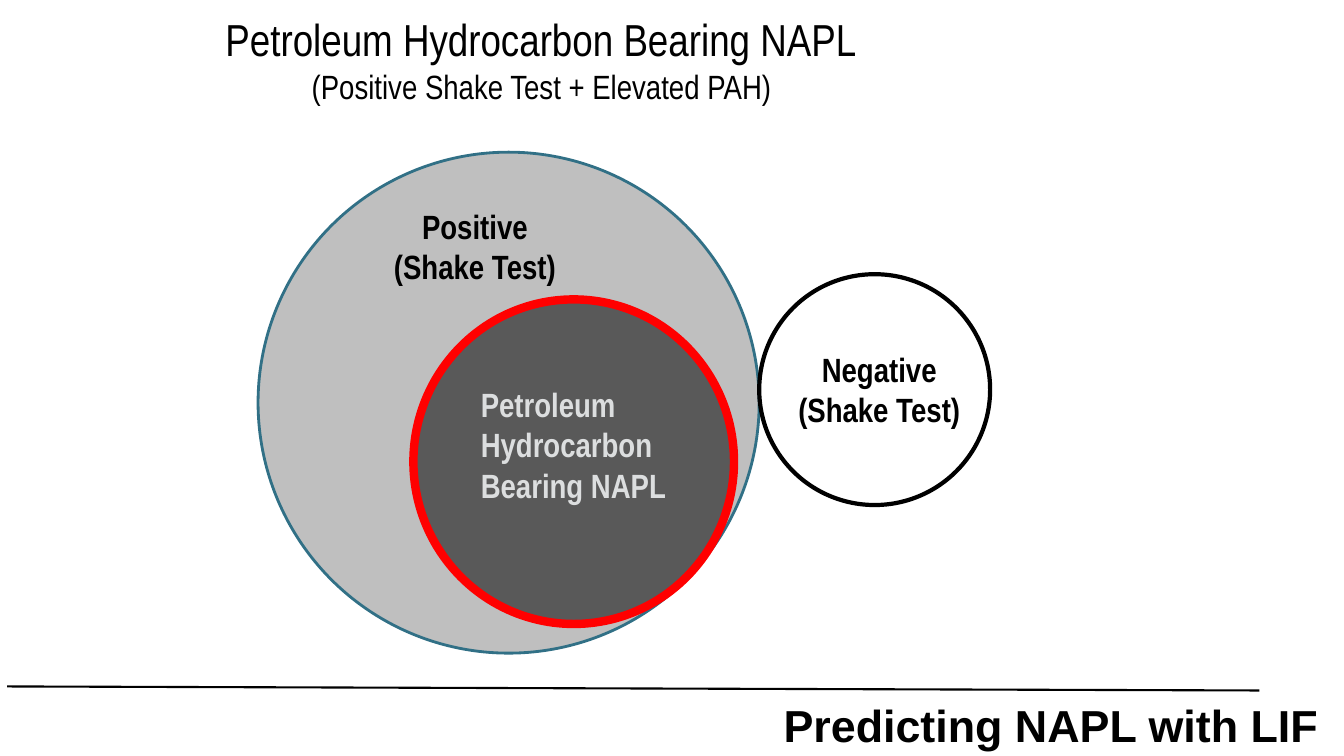
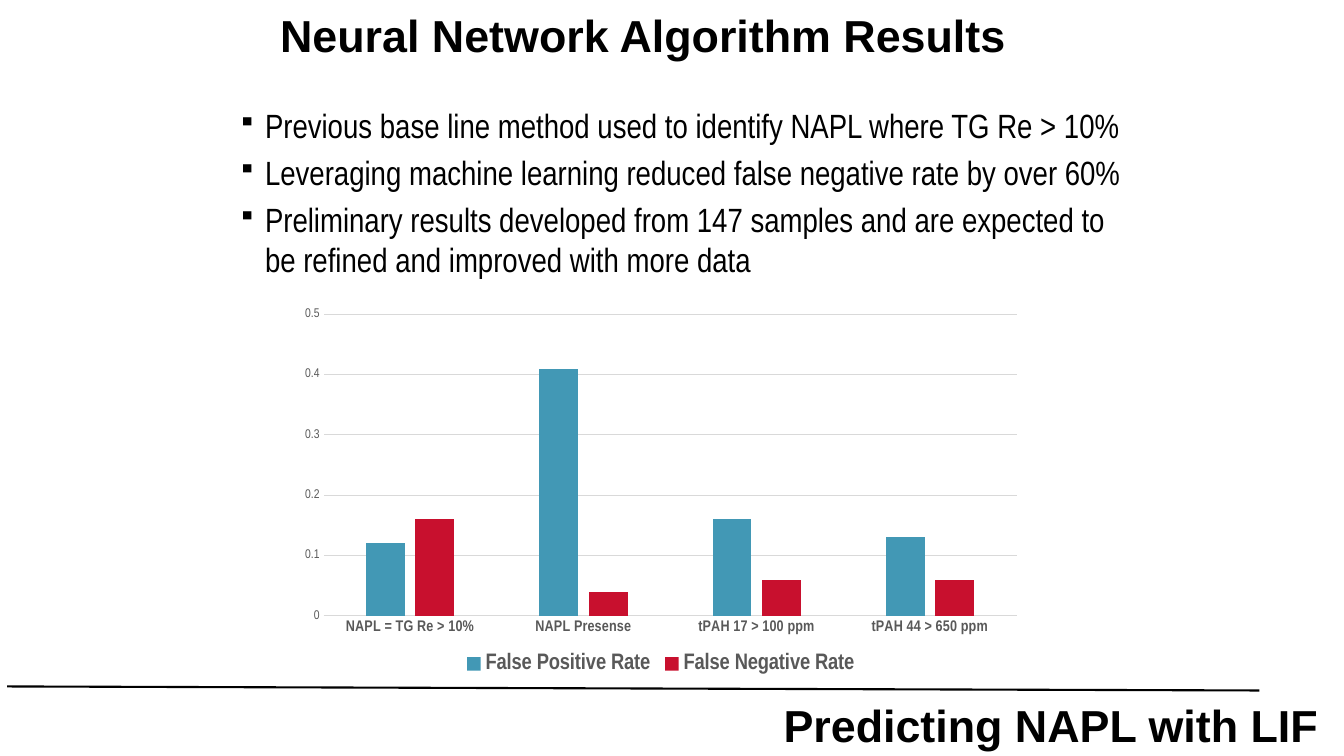
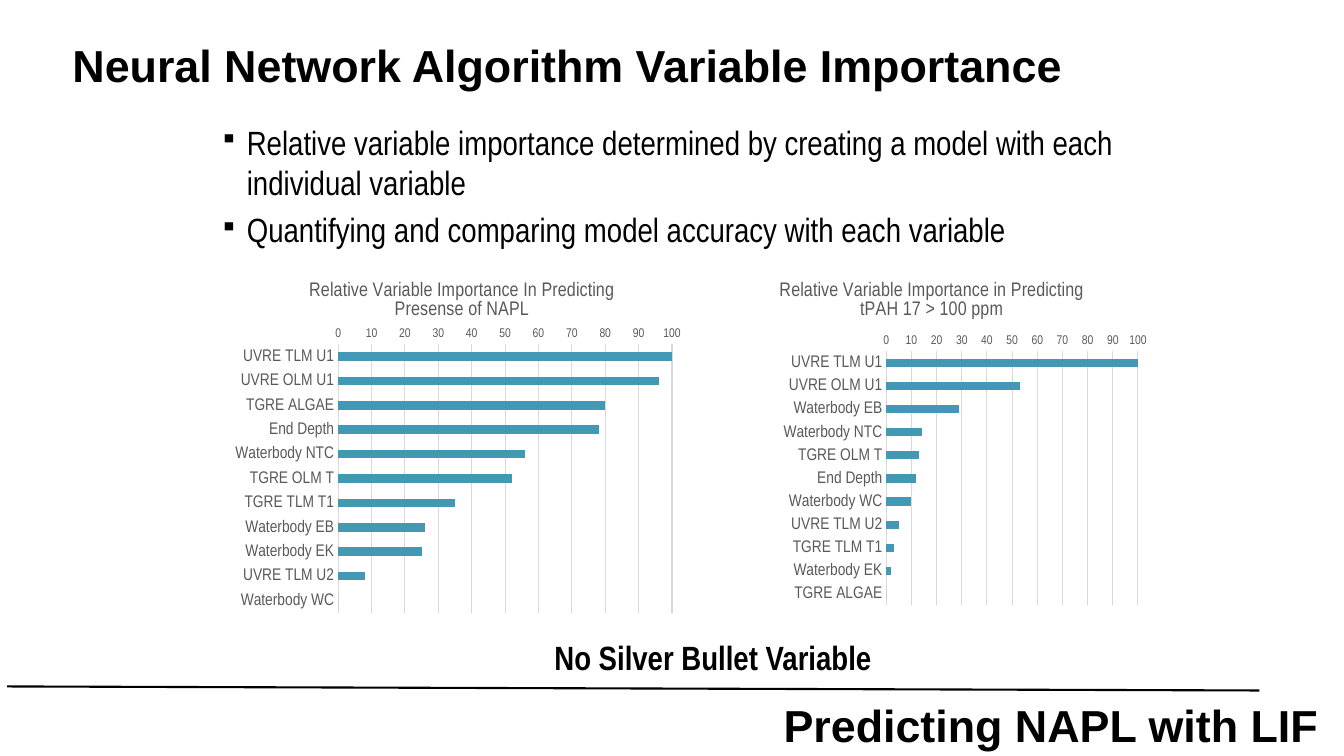
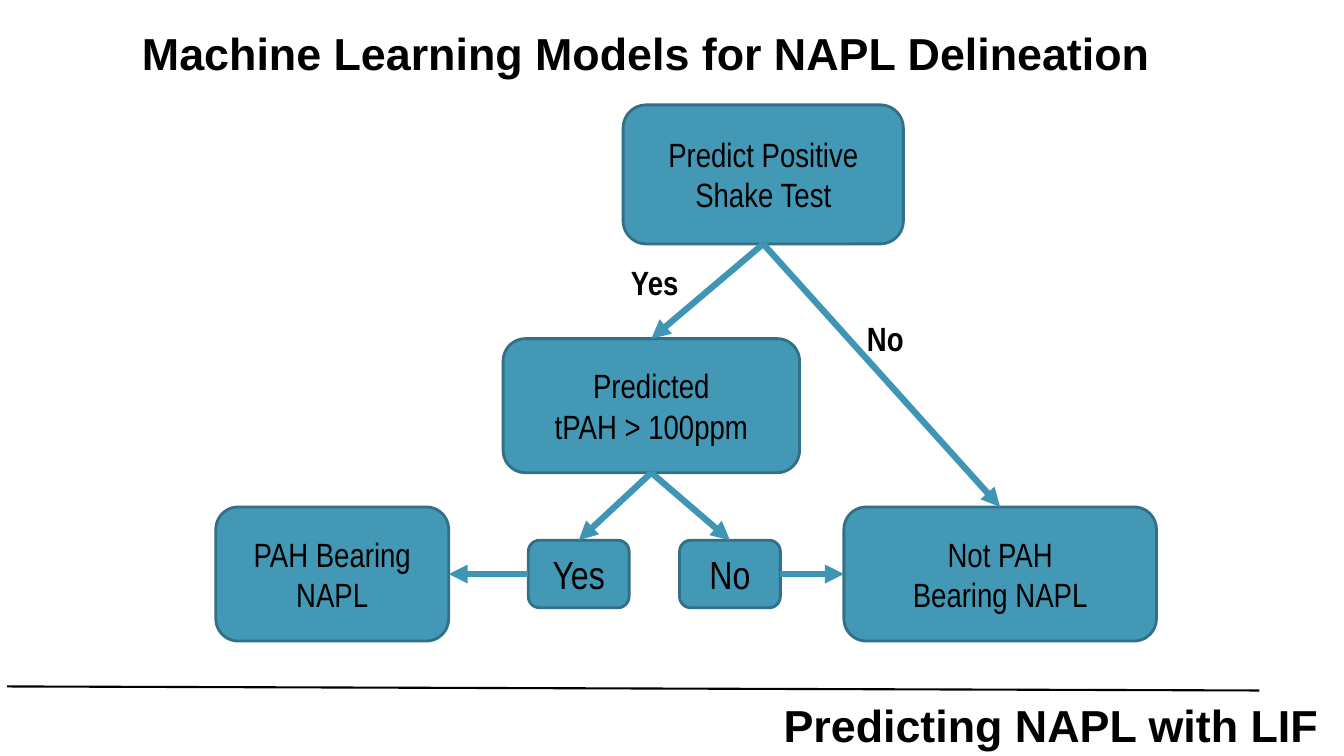
from lxml import etree
from pptx import Presentation
from pptx.chart.data import CategoryChartData
from pptx.dml.color import RGBColor
from pptx.enum.chart import XL_CHART_TYPE as CHART, XL_LEGEND_POSITION as LEGEND, XL_TICK_MARK as TICK
from pptx.enum.shapes import MSO_CONNECTOR as CONN, MSO_SHAPE as SHAPE
from pptx.enum.text import MSO_ANCHOR as ANCHOR, PP_ALIGN as ALIGN
from pptx.oxml import parse_xml
from pptx.oxml.ns import nsdecls, qn
from pptx.util import Inches, Pt

BLACK = RGBColor(0x00, 0x00, 0x00)
BLUE = RGBColor(0x42, 0x98, 0xB5)
EDGE = RGBColor(0x31, 0x70, 0x86)
ARROW = RGBColor(0x3E, 0x96, 0xB4)
CRIMSON = RGBColor(0xC8, 0x10, 0x2E)
RED = RGBColor(0xFF, 0x00, 0x00)
LIGHT = RGBColor(0xBF, 0xBF, 0xBF)
DARK = RGBColor(0x59, 0x59, 0x59)
PALE = RGBColor(0xDC, 0xDE, 0xDF)
GRID = RGBColor(0xD9, 0xD9, 0xD9)

NARROW = "Arial Narrow"
BODY = {"name": NARROW, "size": Pt(24), "bold": False}
STRONG = {**BODY, "bold": True}
HEADING = {"name": "Arial", "size": Pt(32), "bold": True}
HEADING_LINE = Pt(34.7)
TOP, LEFT, BOTTOM, RIGHT = range(4)


def set_font(font, fmt, color=BLACK):
    for key, value in fmt.items():
        setattr(font, key, value)
    font.color.rgb = color


def set_line(line, color, width):
    line.color.rgb = color
    line.width = Pt(width)


def write(tf, lines, fmt, color=BLACK, align=None, spacing=None):
    for i, text in enumerate(lines):
        p = tf.add_paragraph() if i else tf.paragraphs[0]
        for key, value in {"alignment": align, "line_spacing": spacing}.items():
            setattr(p, key, value)
        r = p.add_run()
        r.text = text
        set_font(r.font, fmt, color)


def add_text(s, box, lines, fmt, wrap=True, **options):
    tf = s.shapes.add_textbox(*map(Inches, box)).text_frame
    tf.word_wrap = wrap
    write(tf, lines, fmt, **options)
    return tf


def add_title(s, box, text):
    add_text(s, box, [text], HEADING, spacing=HEADING_LINE)


def add_bullets(s, box, lines):
    tf = add_text(s, box, lines, BODY)
    for i, p in enumerate(tf.paragraphs):
        if i:
            p.space_before = Pt(4.8)
        pPr = p._p.get_or_add_pPr()
        pPr.set("marL", str(Inches(0.27)))
        pPr.set("indent", str(-Inches(0.27)))
        etree.SubElement(pPr, qn("a:buSzPct")).set("val", "75000")
        etree.SubElement(pPr, qn("a:buChar")).set("char", "▪")


def add_shape(s, kind, box, fill, edge, width):
    sp = s.shapes.add_shape(kind, *map(Inches, box))
    sp.shadow.inherit = False
    if fill is None:
        sp.fill.background()
    else:
        sp.fill.solid()
        sp.fill.fore_color.rgb = fill
    set_line(sp.line, edge, width)
    return sp


def add_node(s, box, lines, size=24):
    sp = add_shape(s, SHAPE.FLOWCHART_ALTERNATE_PROCESS, box, BLUE, EDGE, 2)
    write(sp.text_frame, lines, {**BODY, "size": Pt(size)}, align=ALIGN.CENTER)
    return sp


def add_line(s, ends, color, width):
    line = s.shapes.add_connector(CONN.STRAIGHT, *map(Inches, ends))
    set_line(line.line, color, width)
    etree.SubElement(line._element.spPr, qn("a:effectLst"))
    return line


def add_arrow(s, start, start_site, end, end_site):
    line = add_line(s, (0, 0, 1, 1), ARROW, 4.5)
    line.begin_connect(start, start_site)
    line.end_connect(end, end_site)
    ln = line._element.spPr.find(qn("a:ln"))
    etree.SubElement(ln, qn("a:tailEnd")).set("type", "triangle")


def add_slide(prs):
    s = prs.slides.add_slide(prs.slide_layouts[6])
    add_line(s, (0.07, 6.81, 12.49, 6.85), BLACK, 1.5)
    tf = add_text(s, (7.52, 6.89, 5.81, 0.61), ["Predicting NAPL with LIF"], HEADING,
                  align=ALIGN.CENTER, spacing=HEADING_LINE)
    tf.vertical_anchor = ANCHOR.BOTTOM
    tf.margin_left = tf.margin_right = Inches(0.25)
    return s


def layout_xml(x, y, size=None):
    target = '<c:layoutTarget val="inner"/>' if size else ""
    extent = '<c:w val="{}"/><c:h val="{}"/>'.format(*size) if size else ""
    return parse_xml(
        f'<c:layout {nsdecls("c")}><c:manualLayout>{target}'
        f'<c:xMode val="edge"/><c:yMode val="edge"/><c:x val="{x}"/><c:y val="{y}"/>'
        f'{extent}</c:manualLayout></c:layout>')


def add_chart(s, kind, box, cats, series, gap, top, cat_font):
    data = CategoryChartData()
    data.categories = cats
    for name, values, _ in series:
        data.add_series(name, values)
    chart = s.shapes.add_chart(kind, *map(Inches, box), data).chart
    set_font(chart.font, {"name": NARROW, "size": Pt(10)})
    chart.has_legend = chart.has_title = False
    plot = chart.plots[0]
    plot.gap_width = gap
    plot.vary_by_categories = False
    for ser, (_, _, color) in zip(plot.series, series):
        ser.format.fill.solid()
        ser.format.fill.fore_color.rgb = color
    cat, val = chart.category_axis, chart.value_axis
    for axis, fmt in ((cat, cat_font), (val, {"size": Pt(9), "bold": False})):
        axis.major_tick_mark = axis.minor_tick_mark = TICK.NONE
        set_font(axis.tick_labels.font, {"name": NARROW, **fmt}, DARK)
    set_line(cat.format.line, GRID, 0.75)
    val.format.line.fill.background()
    val.minimum_scale, val.maximum_scale, val.major_unit = 0, top, top / (5 if top < 1 else 10)
    val.has_major_gridlines = True
    set_line(val.major_gridlines.format.line, GRID, 0.75)
    return chart


def add_importance(s, box, title, title_at, plot_at, plot_size, ranking):
    chart = add_chart(s, CHART.BAR_CLUSTERED, box, list(ranking),
                      [("Series 1", list(ranking.values()), BLUE)],
                      182, 100, {"size": Pt(12), "bold": False})
    chart.category_axis.reverse_order = True
    write(chart.chart_title.text_frame, [title], {**BODY, "size": Pt(14)}, DARK)
    element = chart.chart_title._element
    for old in element.findall(qn("c:layout")):
        element.remove(old)
    element.find(qn("c:tx")).addnext(layout_xml(*title_at))
    area = chart._chartSpace.chart.plotArea
    for old in area.findall(qn("c:layout")):
        area.remove(old)
    area.insert(0, layout_xml(*plot_at, plot_size))


def venn_slide(prs):
    s = add_slide(prs)
    center = {"wrap": False, "align": ALIGN.CENTER}
    add_shape(s, SHAPE.OVAL, (2.56, 1.51, 4.97, 4.97), LIGHT, EDGE, 2)
    add_shape(s, SHAPE.OVAL, (7.53, 2.72, 2.29, 2.29), None, BLACK, 3)
    tf = add_text(s, (1.42, 0.07, 7.9, 1.04),
                  ["Petroleum Hydrocarbon Bearing NAPL", "(Positive Shake Test + Elevated PAH)"],
                  BODY, **center)
    tf.paragraphs[0].runs[0].font.size = Pt(32)
    add_text(s, (7.63, 3.41, 2.18, 0.91), ["Negative", "(Shake Test)"], STRONG, **center)
    add_shape(s, SHAPE.OVAL, (4.1, 2.97, 3.18, 3.22), DARK, RED, 6)
    add_text(s, (4.67, 3.76, 2.35, 1.31), ["Petroleum", "Hydrocarbon Bearing NAPL"],
             STRONG, color=PALE)
    add_text(s, (3.62, 1.99, 2.18, 0.91), ["Positive", "(Shake Test)"], STRONG, **center)


def results_slide(prs):
    s = add_slide(prs)
    add_title(s, (2.68, 0.08, 8.24, 0.58), "Neural Network Algorithm Results")
    add_bullets(s, (2.26, 0.99, 9.08, 1.9), [
        "Previous base line method used to identify NAPL where TG Re > 10%",
        "Leveraging machine learning reduced false negative rate by over 60%",
        "Preliminary results developed from 147 samples and are expected to be refined "
        "and improved with more data"])
    chart = add_chart(
        s, CHART.COLUMN_CLUSTERED, (2.88, 2.98, 7.35, 3.75),
        ["NAPL = TG Re > 10%", "NAPL Presense", "tPAH 17 > 100 ppm", "tPAH 44 > 650 ppm"],
        [("False Positive Rate", (0.12, 0.41, 0.16, 0.13), BLUE),
         ("False Negative Rate", (0.16, 0.04, 0.06, 0.06), CRIMSON)],
        219, 0.5, {"size": Pt(11), "bold": True})
    chart.plots[0].overlap = -27
    chart.has_legend = True
    chart.legend.position = LEGEND.BOTTOM
    chart.legend.include_in_layout = False
    set_font(chart.legend.font, {**STRONG, "size": Pt(16)}, DARK)


def importance_slide(prs):
    s = add_slide(prs)
    add_title(s, (0.62, 0.38, 10.4, 0.58), "Neural Network Algorithm Variable Importance")
    add_bullets(s, (2.08, 1.16, 9.35, 1.4), [
        "Relative variable importance determined by creating a model with each individual variable",
        "Quantifying and comparing model accuracy with each variable"])
    add_importance(
        s, (2.25, 2.6, 4.6, 3.55),
        "Relative Variable Importance In Predicting Presense of NAPL",
        (0.17, 0.04), (0.24, 0.23), (0.72, 0.75),
        {"UVRE TLM U1": 100, "UVRE OLM U1": 96, "TGRE ALGAE": 80, "End Depth": 78,
         "Waterbody NTC": 56, "TGRE OLM T": 52, "TGRE TLM T1": 35, "Waterbody EB": 26,
         "Waterbody EK": 25, "UVRE TLM U2": 8, "Waterbody WC": 0})
    add_importance(
        s, (7.17, 2.6, 4.38, 3.55),
        "Relative Variable Importance in Predicting tPAH 17 > 100 ppm",
        (0.12, 0.04), (0.37, 0.25), (0.57, 0.71),
        {"UVRE TLM U1": 100, "UVRE OLM U1": 53, "Waterbody EB": 29, "Waterbody NTC": 14,
         "TGRE OLM T": 13, "End Depth": 12, "Waterbody WC": 10, "UVRE TLM U2": 5,
         "TGRE TLM T1": 3, "Waterbody EK": 2, "TGRE ALGAE": 0})
    add_text(s, (5.4, 6.27, 3.38, 0.5), ["No Silver Bullet Variable"], STRONG, wrap=False)


def decision_slide(prs):
    s = add_slide(prs)
    add_title(s, (1.31, 0.26, 10.79, 0.58), "Machine Learning Models for NAPL Delineation")
    shake = add_node(s, (6.18, 1.04, 2.78, 1.38), ["Predict Positive Shake Test"])
    not_pah = add_node(s, (8.37, 5.03, 3.1, 1.33), ["Not PAH", "Bearing NAPL"])
    tpah = add_node(s, (4.99, 3.36, 2.94, 1.33), ["Predicted", "tPAH > 100ppm"])
    yes = add_node(s, (5.24, 5.36, 1, 0.67), ["Yes"], 28)
    no = add_node(s, (6.74, 5.36, 1, 0.67), ["No"], 28)
    pah = add_node(s, (2.14, 5.03, 2.31, 1.33), ["PAH Bearing NAPL"])
    for link in ((shake, BOTTOM, tpah, TOP), (shake, BOTTOM, not_pah, TOP),
                 (tpah, BOTTOM, yes, TOP), (tpah, BOTTOM, no, TOP),
                 (no, RIGHT, not_pah, LEFT), (yes, LEFT, pah, RIGHT)):
        add_arrow(s, *link)
    add_text(s, (6.16, 2.55, 0.78, 0.5), ["Yes"], STRONG, wrap=False)
    add_text(s, (8.5, 3.1, 0.65, 0.5), ["No"], STRONG, wrap=False)


def main():
    prs = Presentation()
    prs.slide_width, prs.slide_height = Inches(13.33), Inches(7.5)
    for build in (venn_slide, results_slide, importance_slide, decision_slide):
        build(prs)
    prs.save("out.pptx")


if __name__ == "__main__":
    main()
